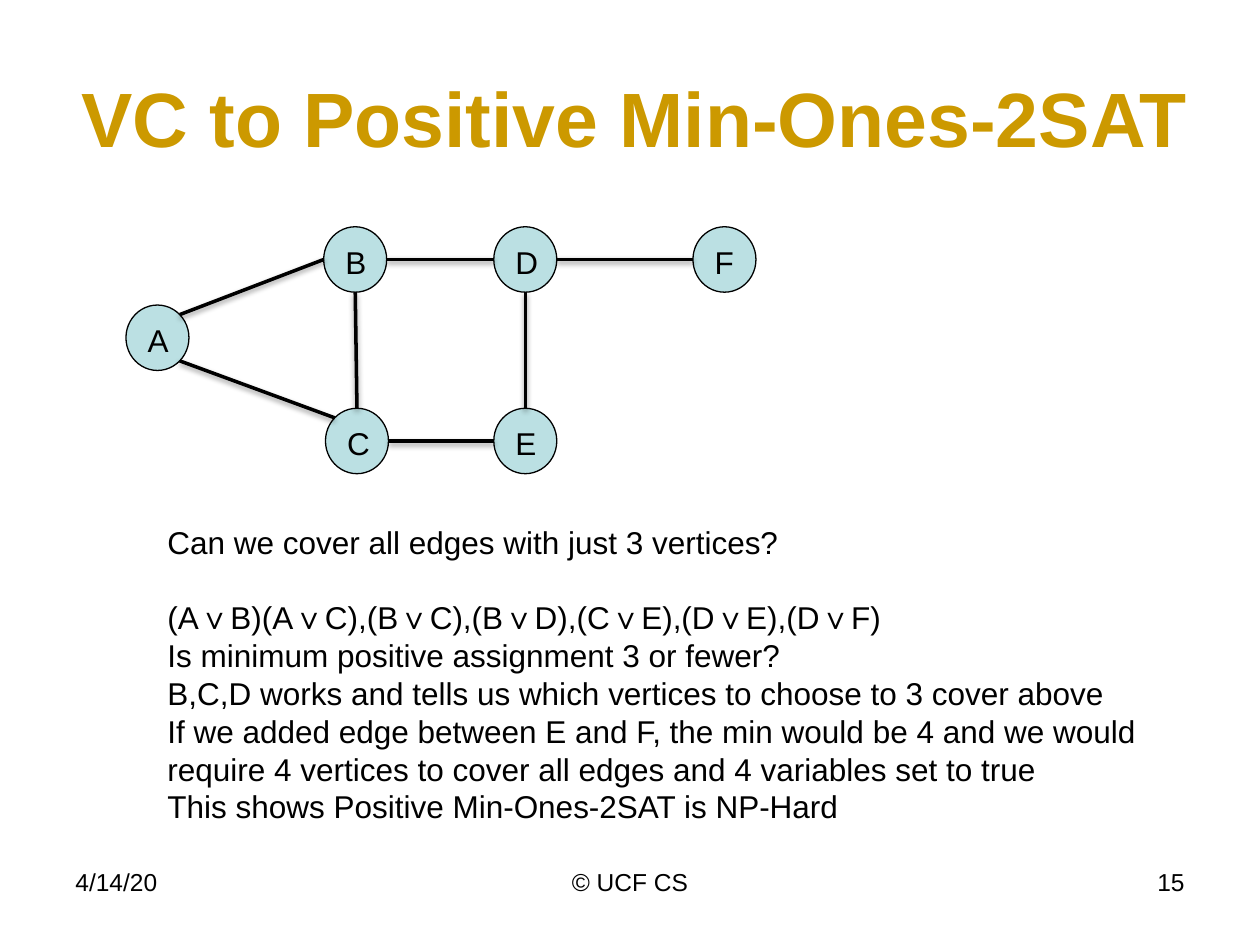
from math import sqrt

from lxml import etree
from pptx import Presentation
from pptx.dml.color import RGBColor
from pptx.enum.shapes import MSO_CONNECTOR, MSO_SHAPE
from pptx.enum.text import MSO_ANCHOR, PP_ALIGN
from pptx.util import Pt

GOLD = RGBColor(0xCC, 0x99, 0x00)
BLACK = RGBColor(0, 0, 0)
PALE_BLUE = RGBColor(0xBB, 0xE0, 0xE3)

LINE_SHADOW = """
<a:effectLst xmlns:a="http://schemas.openxmlformats.org/drawingml/2006/main">
  <a:outerShdw blurRad="40000" dist="20000" dir="5400000" rotWithShape="0">
    <a:srgbClr val="000000"><a:alpha val="38000"/></a:srgbClr>
  </a:outerShdw>
</a:effectLst>"""


def style(paragraph, size, color=BLACK, align=PP_ALIGN.LEFT, bold=False):
    paragraph.alignment = align
    paragraph.font.name = "Arial"
    paragraph.font.size = Pt(size)
    paragraph.font.bold = bold
    paragraph.font.color.rgb = color


def add_text(left, top, width, height, lines, size, **look):
    box = page.shapes.add_textbox(Pt(left), Pt(top), Pt(width), Pt(height))
    frame = box.text_frame
    frame.word_wrap = True
    frame.text = "\n".join(lines)
    for paragraph in frame.paragraphs:
        style(paragraph, size, **look)
    return frame


deck = Presentation()
deck.slide_width, deck.slide_height = Pt(720), Pt(540)
page = deck.slides.add_slide(deck.slide_layouts[6])

title = add_text(36, 21.6, 653.8, 90, ["VC to Positive Min-Ones-2SAT"], 44,
                 color=GOLD, align=PP_ALIGN.CENTER, bold=True)
title.vertical_anchor = MSO_ANCHOR.MIDDLE

# Footer
for left, width, text, align in [
    (36, 168, "4/14/20", PP_ALIGN.LEFT),
    (246, 228, "© UCF CS", PP_ALIGN.CENTER),
    (516, 168, "15", PP_ALIGN.RIGHT),
]:
    add_text(left, 491.8, width, 37.4, [text], 14, align=align)

# Graph vertices, given by their centres
RADIUS_X, RADIUS_Y = 18, 18.7
UPPER, MIDDLE, LOWER = 148.3, 193, 252
centers = {
    "A": (90, MIDDLE),
    "B": (203, UPPER),
    "C": (204, LOWER),
    "D": (300.2, UPPER),
    "E": (300.2, LOWER),
    "F": (414, UPPER),
}
for name, (x, y) in centers.items():
    vertex = page.shapes.add_shape(
        MSO_SHAPE.OVAL, Pt(x - RADIUS_X), Pt(y - RADIUS_Y),
        Pt(2 * RADIUS_X), Pt(2 * RADIUS_Y))
    vertex.shadow.inherit = False
    vertex.fill.solid()
    vertex.fill.fore_color.rgb = PALE_BLUE
    vertex.line.color.rgb = BLACK
    vertex.line.width = Pt(0.75)
    vertex.text_frame.vertical_anchor = MSO_ANCHOR.TOP
    vertex.text_frame.text = name
    style(vertex.text_frame.paragraphs[0], 18)

# Graph edges, each leaving and meeting a vertex on the given side
DIAGONAL = sqrt(0.5)
LEFT, RIGHT, TOP, BOTTOM = (-1, 0), (1, 0), (0, -1), (0, 1)
TOP_LEFT = (-DIAGONAL, -DIAGONAL)
TOP_RIGHT = (DIAGONAL, -DIAGONAL)
BOTTOM_RIGHT = (DIAGONAL, DIAGONAL)
edges = [
    ("A", TOP_RIGHT, "B", LEFT),
    ("A", BOTTOM_RIGHT, "C", TOP_LEFT),
    ("B", RIGHT, "D", LEFT),
    ("C", RIGHT, "E", LEFT),
    ("D", RIGHT, "F", LEFT),
    ("B", BOTTOM, "C", TOP),
    ("D", BOTTOM, "E", TOP),
]
for start, start_side, end, end_side in edges:
    ends = []
    for name, (side_x, side_y) in ((start, start_side), (end, end_side)):
        x, y = centers[name]
        ends += [Pt(x + side_x * RADIUS_X), Pt(y + side_y * RADIUS_Y)]
    edge = page.shapes.add_connector(MSO_CONNECTOR.STRAIGHT, *ends)
    edge.line.color.rgb = BLACK
    edge.line.width = Pt(2)
    edge._element.spPr.append(etree.fromstring(LINE_SHADOW))

argument = add_text(88.6, 295.2, 581.8, 181.4, [
    "Can we cover all edges with just 3 vertices?",
    "(A∨B)(A∨C),(B∨C),(B∨D),(C∨E),(D∨E),(D∨F)",
    "Is minimum positive assignment 3 or fewer?",
    "B,C,D works and tells us which vertices to choose to 3 cover above",
    "If we added edge between E and F, the min would be 4 and we would "
    "require 4 vertices to cover all edges and 4 variables set to true",
    "This shows Positive Min-Ones-2SAT is NP-Hard",
], 18)
for paragraph in argument.paragraphs:
    paragraph.line_spacing = Pt(21.6)
argument.paragraphs[1].space_before = Pt(21.6)

deck.save("out.pptx")
